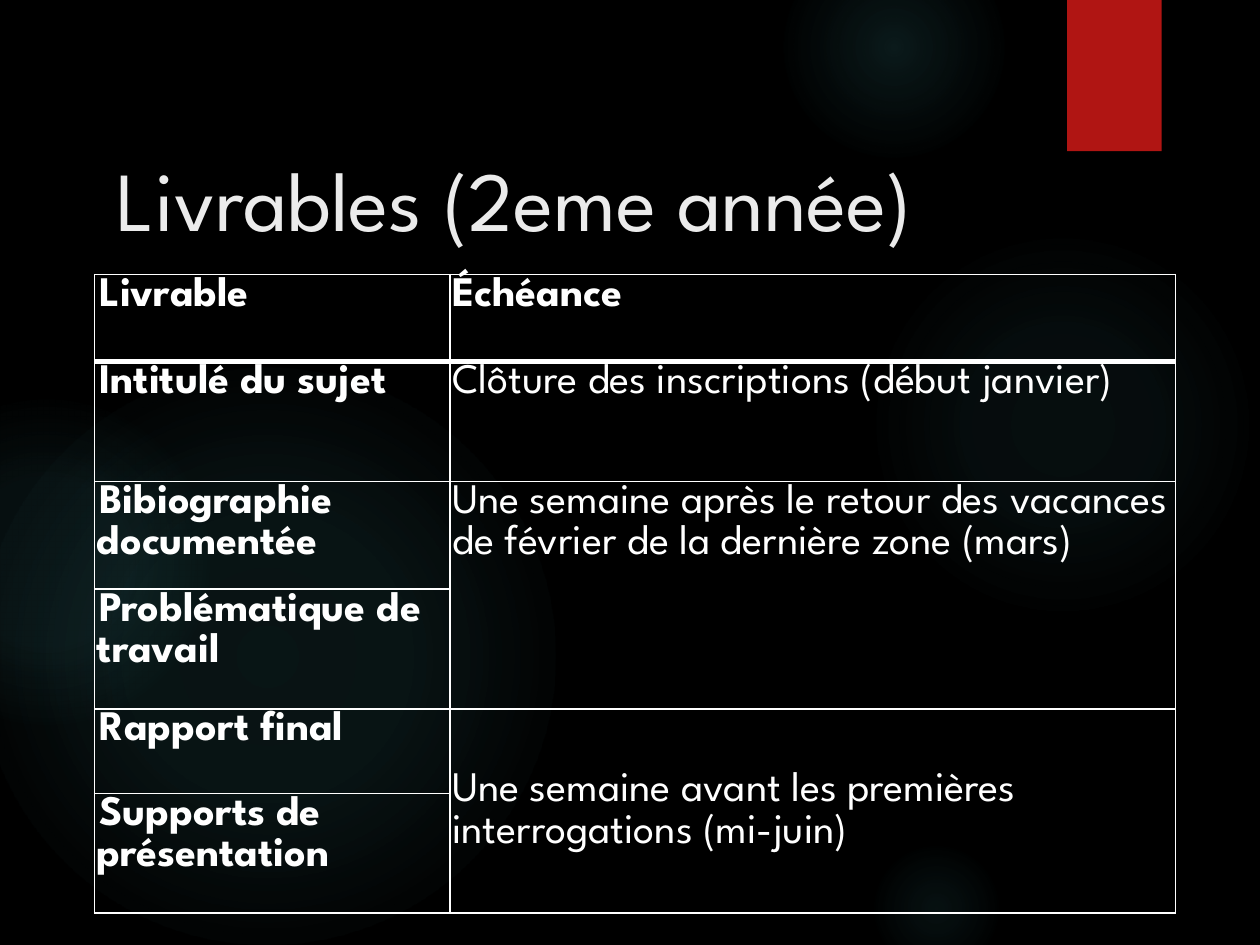
from lxml import etree
from pptx import Presentation
from pptx import util as u
from pptx.dml.color import RGBColor
from pptx.enum import shapes, text
from pptx.oxml import parse_xml
from pptx.oxml.ns import nsdecls, qn

FONT = "League Spartan"
BLACK = RGBColor(0x00, 0x00, 0x00)
WHITE = RGBColor(0xFF, 0xFF, 0xFF)
TITLE_GREY = RGBColor(0xEB, 0xEB, 0xEB)
TEAL = RGBColor(0x50, 0xB9, 0xC1)
RED = RGBColor(0xB0, 0x15, 0x13)

# left, top, diameter, then (position, opacity) stops in percent
GLOWS = [
    (6.89, 1.83, 3.08, [(0, 7), (36, 6), (69, 0)]),
    (6.22, -0.5, 1.75, [(0, 14), (36, 7), (73, 0)]),
    (6.89, 6.67, 1.08, [(0, 9), (36, 5), (66, 0)]),
    (-0.17, 2.92, 4.58, [(0, 11), (36, 10), (75, 0)]),
    (-0.92, 3.17, 2.58, [(0, 8), (36, 8), (72, 0)]),
]
COLUMN_WIDTHS = [2.82, 5.76]
ROW_HEIGHTS = [0.69, 0.95, 0.69, 0.95, 0.67, 0.95]
DELIVERABLES = ["Livrable", "Intitulé du sujet", "Bibiographie documentée",
                "Problématique de travail", "Rapport final", "Supports de présentation"]
# first row, last row, wording, anchor
DEADLINES = [
    (0, 0, "Échéance", text.MSO_ANCHOR.TOP),
    (1, 1, "Clôture des inscriptions (début janvier)", text.MSO_ANCHOR.TOP),
    (2, 3, "Une semaine après le retour des vacances de février de la dernière zone (mars)",
     text.MSO_ANCHOR.TOP),
    (4, 5, "Une semaine avant les premières interrogations (mi-juin)", text.MSO_ANCHOR.MIDDLE),
]


class SlideBuilder:
    def __init__(self, slide, font):
        self.slide = slide
        self.font = font

    def shape(self, kind, left, top, width, height):
        shape = self.slide.shapes.add_shape(
            kind, u.Inches(left), u.Inches(top), u.Inches(width), u.Inches(height))
        shape.shadow.inherit = False
        shape.line.fill.background()
        return shape

    def glow(self, left, top, diameter, stops):
        shape = self.shape(shapes.MSO_SHAPE.OVAL, left, top, diameter, diameter)
        stop_xml = "".join(
            f'<a:gs pos="{position * 1000}"><a:srgbClr val="{TEAL}">'
            f'<a:alpha val="{opacity * 1000}"/></a:srgbClr></a:gs>'
            for position, opacity in stops)
        gradient = parse_xml(
            f'<a:gradFill {nsdecls("a")}><a:gsLst>{stop_xml}</a:gsLst><a:path path="circle">'
            '<a:fillToRect l="50000" t="50000" r="50000" b="50000"/></a:path></a:gradFill>')
        shape.fill.background()
        properties = shape._element.spPr
        properties.replace(properties.find(qn("a:noFill")), gradient)

    def ribbon(self, left, top, width, height):
        shape = self.shape(shapes.MSO_SHAPE.RECTANGLE, left, top, width, height)
        shape.fill.solid()
        shape.fill.fore_color.rgb = RED
        shape._element.spPr.find(qn("a:effectLst")).append(parse_xml(
            f'<a:outerShdw {nsdecls("a")} blurRad="{u.Pt(3)}" dist="{u.Pt(2)}" dir="5400000">'
            f'<a:srgbClr val="{BLACK}"><a:alpha val="45000"/></a:srgbClr></a:outerShdw>'))

    def run(self, paragraph, wording, size, color, bold=False):
        run = paragraph.add_run()
        run.text = wording
        run.font.name = self.font
        run.font.size = u.Pt(size)
        run.font.bold = bold
        run.font.color.rgb = color

    def title(self, wording, left, top, width, height):
        box = self.slide.shapes.add_textbox(
            u.Inches(left), u.Inches(top), u.Inches(width), u.Inches(height))
        box.text_frame.word_wrap = True
        box.text_frame.vertical_anchor = text.MSO_ANCHOR.BOTTOM
        self.run(box.text_frame.paragraphs[0], wording, 48, TITLE_GREY)

    def table(self, left, top, widths, heights):
        frame = self.slide.shapes.add_table(
            len(heights), len(widths), u.Inches(left), u.Inches(top),
            u.Inches(sum(widths)), u.Inches(sum(heights)))
        table = frame.table
        table.first_row = table.horz_banding = False
        for column, width in zip(table.columns, widths):
            column.width = u.Inches(width)
        for row, height in zip(table.rows, heights):
            row.height = u.Inches(height)
        for index, row in enumerate(table.rows):
            for cell in row.cells:
                self.cell_style(cell, top=3 if index == 1 else 1, bottom=3 if index == 0 else 1)
        return table

    def cell_style(self, cell, top, bottom):
        cell.fill.background()
        cell.margin_left = cell.margin_right = u.Inches(0.02)
        cell.margin_top = cell.margin_bottom = 0
        properties = cell._tc.get_or_add_tcPr()
        borders = [("lnL", 1), ("lnR", 1), ("lnT", top), ("lnB", bottom)]
        for position, (side, points) in enumerate(borders):
            line = etree.Element(qn(f"a:{side}"), w=str(u.Pt(points)))
            fill = etree.SubElement(line, qn("a:solidFill"))
            etree.SubElement(fill, qn("a:srgbClr"), val=str(WHITE))
            properties.insert(position, line)

    def cell_text(self, cell, wording, bold, indent=0):
        paragraph = cell.text_frame.paragraphs[0]
        paragraph.line_spacing = 1.07
        paragraph._p.get_or_add_pPr().set("indent", str(u.Inches(indent)))
        self.run(paragraph, wording, 24, WHITE, bold)


def main():
    presentation = Presentation()
    presentation.slide_width = u.Inches(10)
    presentation.slide_height = u.Inches(7.5)
    slide = presentation.slides.add_slide(presentation.slide_layouts[6])
    builder = SlideBuilder(slide, FONT)

    # Background with soft glows and the red ribbon
    slide.background.fill.solid()
    slide.background.fill.fore_color.rgb = BLACK
    for glow in GLOWS:
        builder.glow(*glow)
    builder.ribbon(8.47, 0, 0.75, 1.2)

    # Title
    builder.title("Livrables (2eme année)", 0.83, 0.84, 8.43, 1.18)

    # Deliverables and their deadlines
    table = builder.table(0.75, 2.18, COLUMN_WIDTHS, ROW_HEIGHTS)
    for row, wording in enumerate(DELIVERABLES):
        builder.cell_text(table.cell(row, 0), wording, bold=True, indent=0.02)
    for first, last, wording, anchor in DEADLINES:
        cell = table.cell(first, 1)
        if last > first:
            cell.merge(table.cell(last, 1))
        cell.vertical_anchor = anchor
        builder.cell_text(cell, wording, bold=first == 0)

    presentation.save("out.pptx")


if __name__ == "__main__":
    main()
